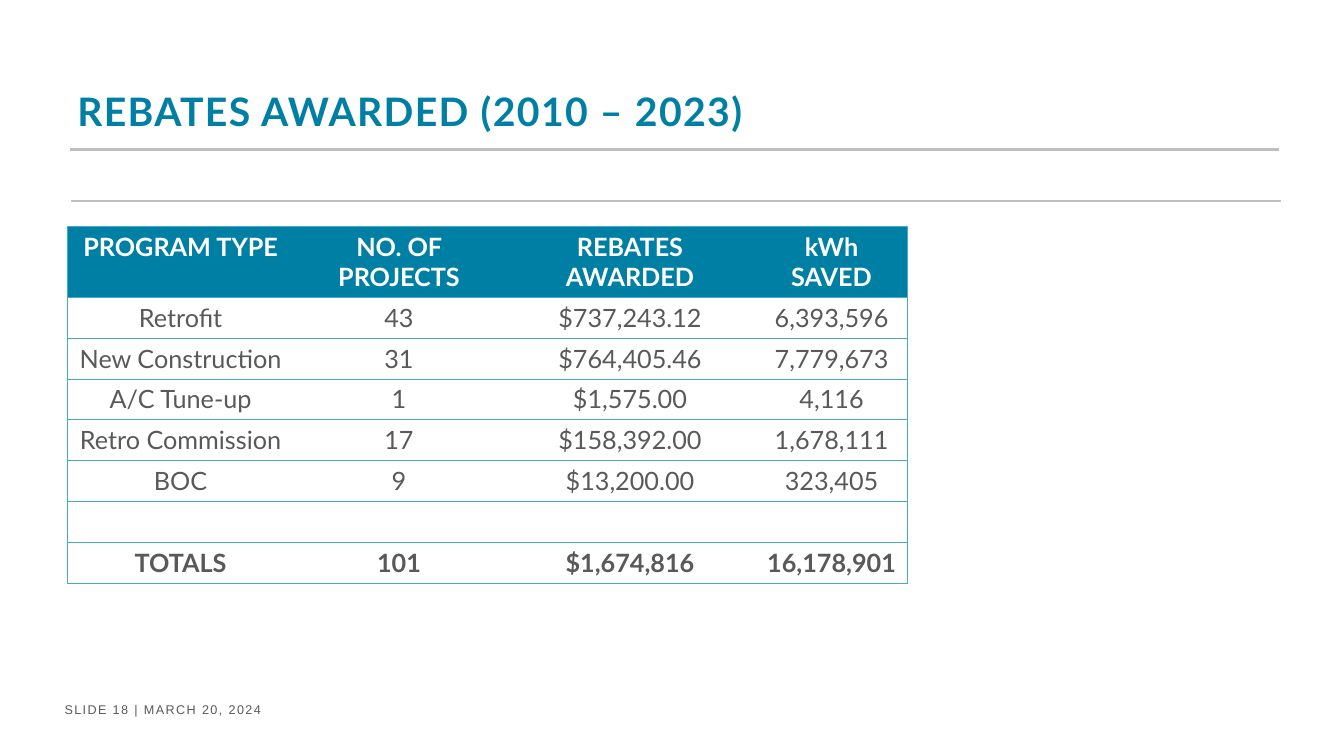
from dataclasses import dataclass

from lxml.etree import SubElement
from pptx import Presentation
from pptx.dml.color import RGBColor
from pptx.enum.shapes import MSO_CONNECTOR
from pptx.enum.text import MSO_ANCHOR, MSO_AUTO_SIZE, PP_ALIGN
from pptx.oxml.ns import qn
from pptx.util import Inches, Pt

COLS, ROWS = 160, 90  # grid units across and down the slide
NO_STYLE = "{2D5ABB26-0587-4C30-8999-92F81FD0307C}"

COL_WIDTHS = (27, 25, 30, 18)
ROW_HEIGHT = 4.86
REBATES = (
    ("PROGRAM TYPE", "NO. OF PROJECTS", "REBATES AWARDED", "kWh SAVED"),
    ("Retrofit", "43", "$737,243.12", "6,393,596"),
    ("New Construction", "31", "$764,405.46", "7,779,673"),
    ("A/C Tune-up", "1", "$1,575.00", "4,116"),
    ("Retro Commission", "17", "$158,392.00", "1,678,111"),
    ("BOC", "9", "$13,200.00", "323,405"),
    ("",) * 4,
    ("TOTALS", "101", "$1,674,816", "16,178,901"),
)


@dataclass(frozen=True)
class Theme:
    primary: str = "007FA4"
    border: str = "46AAC5"
    rule: str = "BFBFBF"
    text: str = "595959"
    white: str = "FFFFFF"
    font: str = "Lato"
    footer_font: str = "Arial"
    title_size: int = 28
    table_size: int = 18
    footer_size: int = 9
    rule_width: float = 1.5
    border_width: float = 0.75


def write(tf, text, *, font, size, color, bold=False, align=PP_ALIGN.LEFT, spacing=0):
    """Put one formatted run in the first paragraph; spacing is in points."""
    p = tf.paragraphs[0]
    p.alignment = align
    r = p.add_run()
    r.text = text
    r.font.name, r.font.size, r.font.bold = font, Pt(size), bold
    r.font.color.rgb = RGBColor.from_string(color)
    if spacing:
        r._r.get_or_add_rPr().set("spc", str(spacing * 100))


def add_borders(cell, sides, color, width):
    """Draw cell borders; sides is drawn from L, R, T, B in that order."""
    tcPr = cell._tc.get_or_add_tcPr()
    for side in sides:
        ln = SubElement(tcPr, qn(f"a:ln{side}"), w=str(Pt(width)))
        fill = SubElement(ln, qn("a:solidFill"))
        SubElement(fill, qn("a:srgbClr"), val=color)


class SlideBuilder:
    def __init__(self, prs, theme):
        self.theme = theme
        self.col, self.row = prs.slide_width / COLS, prs.slide_height / ROWS
        self.slide = prs.slides.add_slide(prs.slide_layouts[5])

    def box(self, x, y, w, h):
        """Turn grid units into left, top, width and height."""
        return (round(x * self.col), round(y * self.row),
                round(w * self.col), round(h * self.row))

    def title(self, text, *place):
        t, sp = self.theme, self.slide.shapes.title
        sp.left, sp.top, sp.width, sp.height = self.box(*place)
        tf = sp.text_frame
        tf.auto_size = MSO_AUTO_SIZE.NONE
        tf.vertical_anchor = MSO_ANCHOR.MIDDLE
        write(tf, text, font=t.font, size=t.title_size, color=t.primary,
              bold=True, spacing=1)

    def rule(self, x, y, w):
        left, top, width, _ = self.box(x, y, w, 0)
        line = self.slide.shapes.add_connector(
            MSO_CONNECTOR.STRAIGHT, left, top, left + width, top)
        line.line.color.rgb = RGBColor.from_string(self.theme.rule)
        line.line.width = Pt(self.theme.rule_width)
        SubElement(line._element.spPr, qn("a:effectLst"))

    def footer(self, text, *place):
        t = self.theme
        tf = self.slide.shapes.add_textbox(*self.box(*place)).text_frame
        tf.word_wrap = True
        tf.auto_size = MSO_AUTO_SIZE.SHAPE_TO_FIT_TEXT
        write(tf, text, font=t.footer_font, size=t.footer_size, color=t.text, spacing=1)

    def table(self, data, x, y, widths, row_height):
        place = self.box(x, y, sum(widths), row_height * len(data))
        table = self.slide.shapes.add_table(len(data), len(widths), *place).table
        table.horz_banding = False
        table._tbl.tblPr.find(qn("a:tableStyleId")).text = NO_STYLE
        for column, width in zip(table.columns, widths):
            column.width = round(width * self.col)
        for i, values in enumerate(data):
            table.rows[i].height = round(row_height * self.row)
            for j, value in enumerate(values):
                sides = "L" * (j == 0) + "R" * (j == len(widths) - 1) + "TB"
                self.cell(table.cell(i, j), value, sides,
                          header=i == 0, bold=i in (0, len(data) - 1))

    def cell(self, cell, value, sides, header, bold):
        t = self.theme
        add_borders(cell, sides, t.border, t.border_width)
        if header:
            cell.fill.solid()
            cell.fill.fore_color.rgb = RGBColor.from_string(t.primary)
        else:
            cell.fill.background()
        if value:
            write(cell.text_frame, value, font=t.font, size=t.table_size, bold=bold,
                  color=t.white if header else t.text, align=PP_ALIGN.CENTER)


def main():
    prs = Presentation()
    prs.slide_width, prs.slide_height = Inches(13.33), Inches(7.5)
    s = SlideBuilder(prs, Theme())
    s.rule(8.3, 17.8, 144)
    s.rule(8.5, 23.9, 144)
    s.footer("SLIDE 18 | MARCH 20, 2024", 6.5, 83, 71, 3)
    s.title("REBATES AWARDED (2010 – 2023)", 8, 9.7, 146, 7)
    s.table(REBATES, 8, 27, COL_WIDTHS, ROW_HEIGHT)
    prs.save("out.pptx")


if __name__ == "__main__":
    main()
